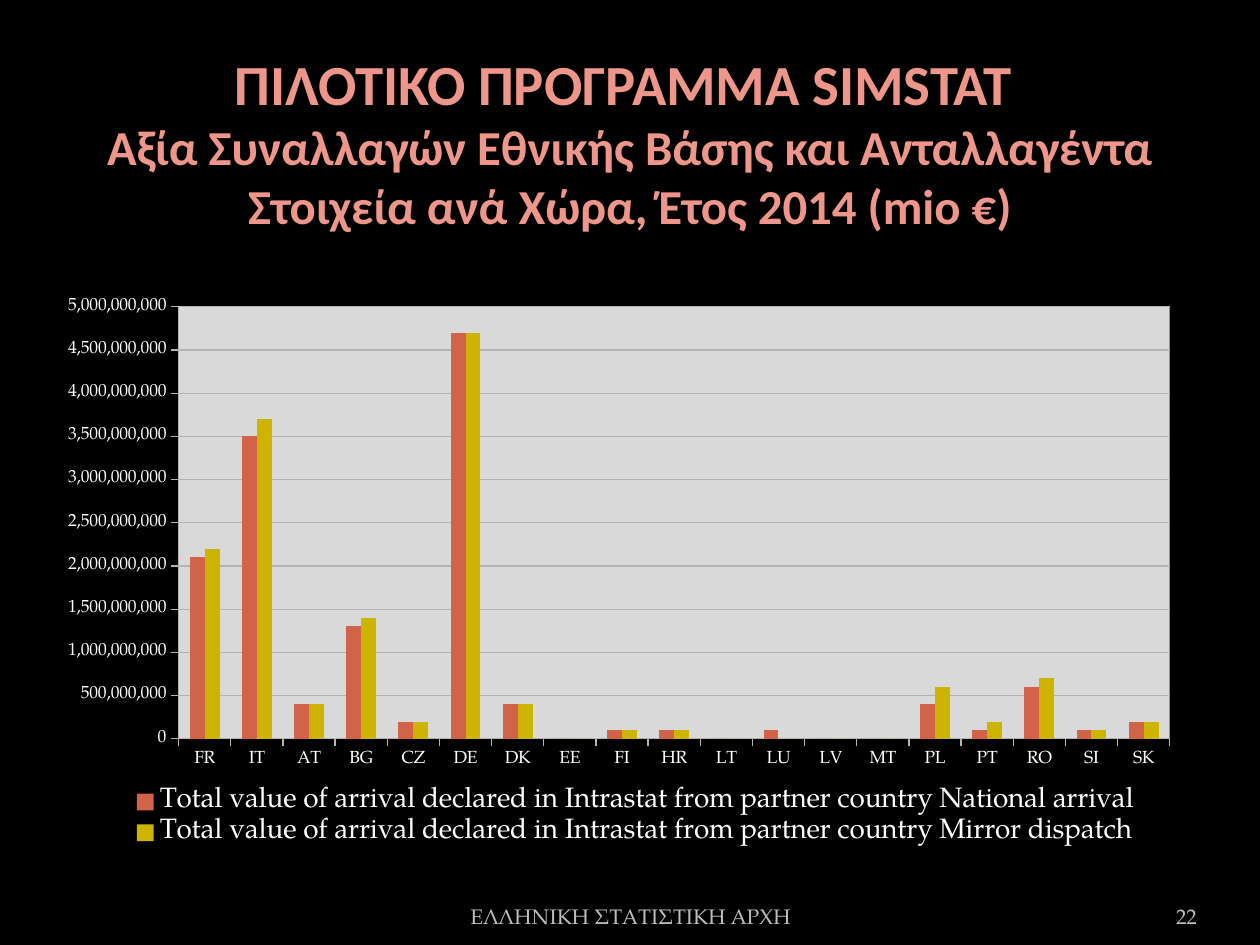
import copy

import pptx
import pptx.chart.data
import pptx.dml.color
import pptx.enum.chart
import pptx.enum.text
import pptx.oxml
import pptx.oxml.ns
import pptx.util

Inches, Pt = pptx.util.Inches, pptx.util.Pt
RGBColor = pptx.dml.color.RGBColor
ALIGN = pptx.enum.text.PP_ALIGN
ANCHOR = pptx.enum.text.MSO_ANCHOR

BLACK = RGBColor(0, 0, 0)
WHITE = RGBColor(255, 255, 255)
SALMON = RGBColor(0xEE, 0x96, 0x8A)
GREY = RGBColor(0xBD, 0xBD, 0xBD)
RULE = RGBColor(0xB3, 0xB3, 0xB3)
PLOT_GREY = RGBColor(0xD9, 0xD9, 0xD9)
BODY_FONT = "TeX Gyre Pagella"

TITLE = [
    ("ΠΙΛΟΤΙΚΟ ΠΡΟΓΡΑΜΜΑ SIMSTAT ", 32.4),
    ("Αξία Συναλλαγών Εθνικής Βάσης και Ανταλλαγέντα Στοιχεία ανά Χώρα, Έτος 2014 (mio €)", 27.9),
]
UNIT = 100_000_000
# country, national arrival, mirror dispatch (hundreds of millions of euro)
TRADE = [
    ("FR", 21, 22), ("IT", 35, 37), ("AT", 4, 4), ("BG", 13, 14), ("CZ", 2, 2),
    ("DE", 47, 47), ("DK", 4, 4), ("EE", 0, 0), ("FI", 1, 1), ("HR", 1, 1),
    ("LT", 0, 0), ("LU", 1, 0), ("LV", 0, 0), ("MT", 0, 0), ("PL", 4, 6),
    ("PT", 1, 2), ("RO", 6, 7), ("SI", 1, 1), ("SK", 2, 2),
]
SERIES = [
    ("National arrival", RGBColor(0xD1, 0x63, 0x49)),
    ("Mirror dispatch", RGBColor(0xCC, 0xB4, 0x00)),
]
SERIES_PREFIX = "Total value of arrival declared in Intrastat from partner country "
PLOT_SHARES = {"x": 0.102, "y": 0.133, "w": 0.874, "h": 0.666}
LEGEND_SHARES = {"x": 0.06, "y": 0.87, "w": 0.89, "h": 0.1}
FOOTER = [
    ("ΕΛΛΗΝΙΚΗ ΣΤΑΤΙΣΤΙΚΗ ΑΡΧΗ", (3.42, 7.02, 3.17, 0.4), ALIGN.CENTER, 0.1),
    ("22", (8.67, 7.02, 0.83, 0.4), ALIGN.RIGHT, 0),
]


def apply(target, **values):
    """Set each named attribute on the target."""
    for name, value in values.items():
        setattr(target, name, value)


def style_font(font, size, color, name=BODY_FONT, bold=False):
    """Give a font its size, colour, face and weight."""
    apply(font, size=Pt(size), name=name, bold=bold)
    font.color.rgb = color


def add_title(slide):
    """Fill the title placeholder with two sizes of text."""
    title = slide.shapes.title
    apply(title, left=Inches(0.5), top=Inches(0.3), width=Inches(9), height=Inches(1.65))
    frame = title.text_frame
    apply(frame, word_wrap=True, vertical_anchor=ANCHOR.MIDDLE,
          auto_size=pptx.enum.text.MSO_AUTO_SIZE.NONE)
    paragraph = frame.paragraphs[0]
    paragraph.alignment = ALIGN.CENTER
    for index, (text, size) in enumerate(TITLE):
        if index:
            paragraph.add_line_break()
            line_break = paragraph._p.findall(pptx.oxml.ns.qn("a:br"))[-1]
            line_break.append(copy.deepcopy(paragraph.runs[-1].font._rPr))
        run = paragraph.add_run()
        run.text = text
        style_font(run.font, size, SALMON, "Calibri", True)


def place(part, shares, position, target=""):
    """Fix a chart part at shares of the chart's size."""
    for old in part.findall(pptx.oxml.ns.qn("c:layout")):
        part.remove(old)
    modes = "".join(f'<c:{axis}Mode val="edge"/>' for axis in "xy")
    sizes = "".join(f'<c:{key} val="{share}"/>' for key, share in shares.items())
    part.insert(position, pptx.oxml.parse_xml(
        f'<c:layout {pptx.oxml.ns.nsdecls("c")}><c:manualLayout>'
        f'{target}{modes}{sizes}</c:manualLayout></c:layout>'))


def arrange(chart):
    """Place the plot area and the legend, and fill the plot area."""
    plot_area = chart._chartSpace.chart.plotArea
    place(plot_area, PLOT_SHARES, 0, '<c:layoutTarget val="inner"/>')
    place(chart.legend._element, LEGEND_SHARES, 1)
    plot_area.append(pptx.oxml.parse_xml(
        f'<c:spPr {pptx.oxml.ns.nsdecls("c", "a")}><a:solidFill>'
        f'<a:srgbClr val="{PLOT_GREY}"/></a:solidFill></c:spPr>'))


def add_trade_chart(slide):
    """Draw the clustered columns by country."""
    data = pptx.chart.data.CategoryChartData(number_format="#,##0")
    data.categories = [row[0] for row in TRADE]
    for column, (name, _) in enumerate(SERIES, 1):
        data.add_series(SERIES_PREFIX + name, [row[column] * UNIT for row in TRADE])
    chart = slide.shapes.add_chart(
        pptx.enum.chart.XL_CHART_TYPE.COLUMN_CLUSTERED,
        *map(Inches, (0.5, 1.75, 9, 5.15)), data).chart
    apply(chart, has_title=False, has_legend=True)
    style_font(chart.font, 10, WHITE)
    plot = chart.plots[0]
    apply(plot, gap_width=150, overlap=0, vary_by_categories=False)
    for series, (_, color) in zip(plot.series, SERIES):
        series.format.fill.solid()
        series.format.fill.fore_color.rgb = color
    apply(chart.legend, position=pptx.enum.chart.XL_LEGEND_POSITION.BOTTOM,
          include_in_layout=False)
    style_font(chart.legend.font, 16, WHITE)
    for axis in (chart.category_axis, chart.value_axis):
        axis.major_tick_mark = pptx.enum.chart.XL_TICK_MARK.OUTSIDE
        style_font(axis.tick_labels.font, 10, WHITE)
        axis.format.line.color.rgb = RULE
    values = chart.value_axis
    apply(values, minimum_scale=0, maximum_scale=50 * UNIT,
          major_unit=5 * UNIT, has_major_gridlines=True)
    values.major_gridlines.format.line.color.rgb = RULE
    apply(values.tick_labels, number_format="#,##0", number_format_is_linked=False)
    arrange(chart)


def add_footer(slide, text, box, alignment, side_inset):
    """Add one small text at the foot of the slide."""
    frame = slide.shapes.add_textbox(*map(Inches, box)).text_frame
    apply(frame, word_wrap=True, vertical_anchor=ANCHOR.BOTTOM,
          margin_left=Inches(side_inset), margin_right=Inches(side_inset))
    paragraph = frame.paragraphs[0]
    paragraph.alignment = alignment
    run = paragraph.add_run()
    run.text = text
    style_font(run.font, 12, GREY)


deck = pptx.Presentation()
apply(deck, slide_width=Inches(10), slide_height=Inches(7.5))
slide = deck.slides.add_slide(deck.slide_layouts[5])
slide.background.fill.solid()
slide.background.fill.fore_color.rgb = BLACK
add_title(slide)
add_trade_chart(slide)
for item in FOOTER:
    add_footer(slide, *item)
deck.save("out.pptx")
